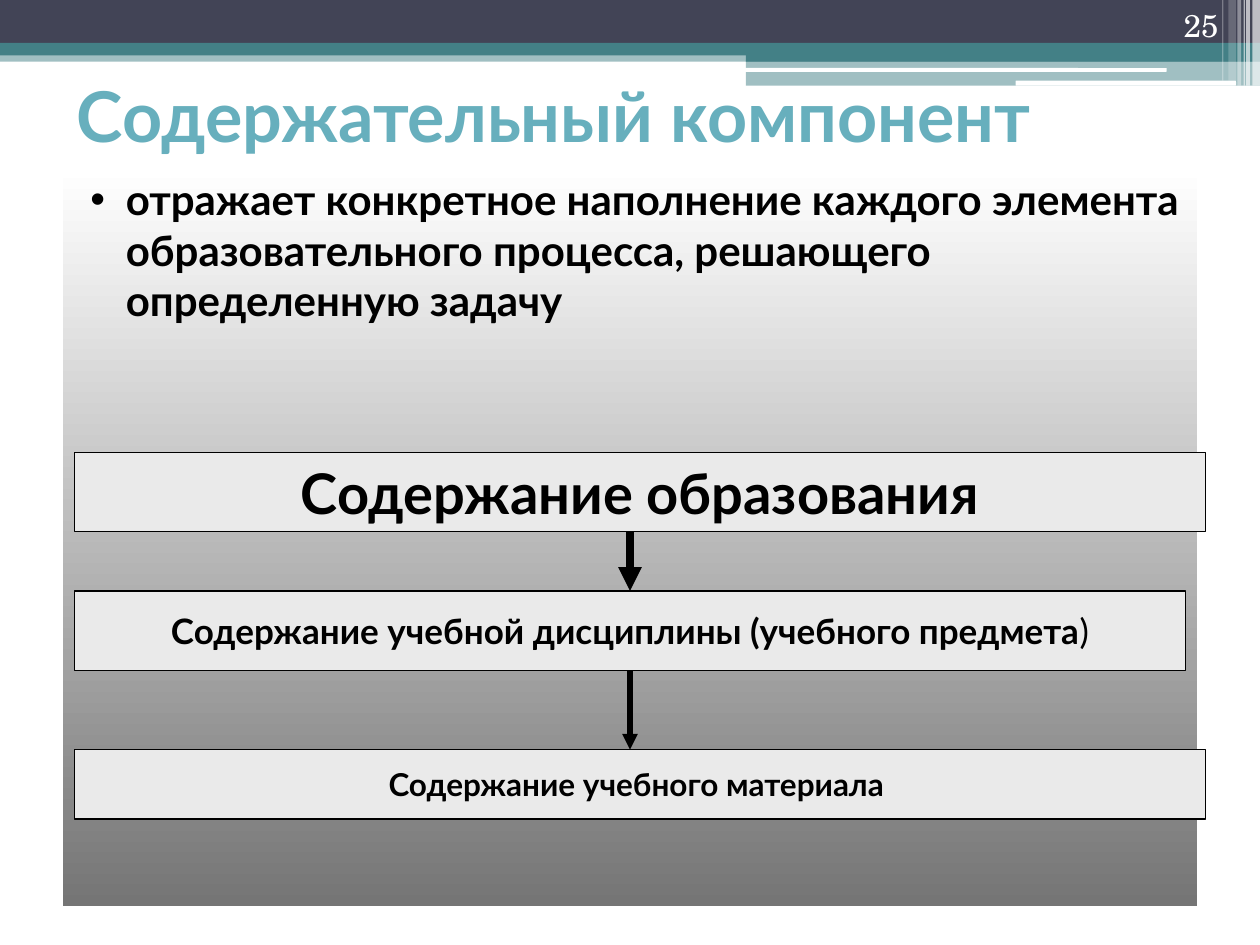
from pptx import Presentation
from pptx.dml.color import RGBColor
from pptx.enum.shapes import MSO_CONNECTOR, MSO_SHAPE
from pptx.enum.text import MSO_ANCHOR, MSO_AUTO_SIZE, PP_ALIGN
from pptx.oxml.ns import qn
from pptx.util import Inches, Pt
from lxml.etree import SubElement

WHITE = RGBColor(0xFF, 0xFF, 0xFF)
BLACK = RGBColor(0, 0, 0)
NAVY = RGBColor(0x42, 0x44, 0x56)
TEAL = RGBColor(0x43, 0x80, 0x86)
TITLE_BLUE = RGBColor(0x67, 0xAF, 0xBD)
BOX_GRAY = RGBColor(0xEA, 0xEA, 0xEA)
PANEL_GRAY = RGBColor(0x75, 0x75, 0x75)


def write_text(shape, text, size, color=BLACK, font="Lato", bold=True,
               align=PP_ALIGN.LEFT, anchor=MSO_ANCHOR.MIDDLE, wrap=True, plain_end=""):
    frame = shape.text_frame
    frame.auto_size = MSO_AUTO_SIZE.NONE
    frame.word_wrap = wrap
    frame.vertical_anchor = anchor
    paragraph = frame.paragraphs[0]
    paragraph.alignment = align
    for part, is_bold in ((text, bold), (plain_end, False)):
        if part:
            run = paragraph.add_run()
            run.text = part
            run.font.size = Pt(size)
            run.font.name = font
            run.font.bold = is_bold
            run.font.color.rgb = color
    return paragraph


class SlideBuilder:
    def __init__(self, presentation):
        self.slide = presentation.slides.add_slide(presentation.slide_layouts[5])

    def title(self, text, left, top, width, height):
        title = self.slide.shapes.title
        title.left, title.top = Inches(left), Inches(top)
        title.width, title.height = Inches(width), Inches(height)
        write_text(title, text, 40, TITLE_BLUE)

    def rectangle(self, left, top, width, height, color, opacity=100, kind=MSO_SHAPE.RECTANGLE):
        shape = self.slide.shapes.add_shape(
            kind, Inches(left), Inches(top), Inches(width), Inches(height))
        shape.shadow.inherit = False
        shape.line.fill.background()
        shape.fill.solid()
        shape.fill.fore_color.rgb = color
        if opacity < 100:
            fill_color = shape._element.spPr.find(qn("a:solidFill"))[0]
            SubElement(fill_color, qn("a:alpha")).set("val", str(opacity * 1000))
        return shape

    def page_number(self, text, left, top, width, height):
        box = self.slide.shapes.add_textbox(
            Inches(left), Inches(top), Inches(width), Inches(height))
        write_text(box, text, 18, WHITE, font="TeX Gyre Schola", bold=False,
                   align=PP_ALIGN.RIGHT, anchor=MSO_ANCHOR.BOTTOM)

    def bullet_panel(self, text, left, top, width, height):
        panel = self.rectangle(left, top, width, height, WHITE)
        panel.fill.gradient()
        panel.fill.gradient_angle = 270
        for stop, color, position in zip(panel.fill.gradient_stops, (WHITE, PANEL_GRAY), (0, 1)):
            stop.color.rgb = color
            stop.position = position
        paragraph = write_text(panel, text, 24, anchor=MSO_ANCHOR.TOP)
        paragraph.space_before = Pt(3)
        properties = paragraph._p.get_or_add_pPr()
        properties.set("marL", str(Inches(0.4)))
        properties.set("indent", str(Inches(-0.28)))
        SubElement(properties, qn("a:buFont")).set("typeface", "Arial")
        SubElement(properties, qn("a:buChar")).set("char", "•")

    def content_box(self, text, top, width, height, size, plain_end=""):
        box = self.rectangle(0.59, top, width, height, BOX_GRAY)
        box.line.color.rgb = BLACK
        box.line.width = Pt(0.75)
        write_text(box, text, size, align=PP_ALIGN.CENTER, wrap=False, plain_end=plain_end)
        return box

    def arrow(self, top, bottom, width, begin=None, end=None):
        connector = self.slide.shapes.add_connector(
            MSO_CONNECTOR.STRAIGHT, Inches(5), Inches(top), Inches(5), Inches(bottom))
        if begin is not None:
            connector.begin_connect(begin, 2)
        if end is not None:
            connector.end_connect(end, 0)
        connector.line.color.rgb = BLACK
        connector.line.width = Pt(width)
        SubElement(connector.line._get_or_add_ln(), qn("a:tailEnd")).set("type", "triangle")
        SubElement(connector._element.spPr, qn("a:effectLst"))


def main():
    presentation = Presentation()
    presentation.slide_width = Inches(10)
    presentation.slide_height = Inches(7.5)
    builder = SlideBuilder(presentation)

    for left, top, width, height, color, opacity in (
        (0, 0.4, 10, 0.09, TEAL, 50),
        (0, 0, 10, 0.34, NAVY, 100),
        (0, 0.34, 10, 0.1, TEAL, 100),
        (5.92, 0.39, 4.08, 0.1, TEAL, 100),
        (5.92, 0.48, 4.08, 0.2, TEAL, 50),
    ):
        builder.rectangle(left, top, width, height, color, opacity)
    for left, top, width, height in ((5.91, 0.54, 3.35, 0.03), (8.06, 0.64, 1.75, 0.04)):
        builder.rectangle(left, top, width, height, WHITE, kind=MSO_SHAPE.ROUNDED_RECTANGLE)
    for left, width, height, opacity in (
        (9.94, 0.06, 0.68, 65),
        (9.89, 0.03, 0.68, 65),
        (9.87, 0.01, 0.68, 60),
        (9.82, 0.03, 0.68, 40),
        (9.75, 0.06, 0.64, 20),
        (9.7, 0.01, 0.64, 30),
    ):
        builder.rectangle(left, 0, width, height, WHITE, opacity)

    builder.page_number("25", 8.94, 0, 0.83, 0.4)
    builder.title("Содержательный компонент", 0.51, 0.28, 9, 1.25)
    builder.bullet_panel(
        "отражает конкретное наполнение каждого элемента образовательного процесса, "
        "решающего определенную задачу", 0.5, 1.33, 9, 5.86)

    builder.content_box("Содержание образования", 3.59, 8.98, 0.63, 32)
    discipline = builder.content_box(
        "Содержание учебной дисциплины (учебного предмета", 4.69, 8.82, 0.63, 20, plain_end=")")
    builder.content_box("Содержание учебного материала ", 5.95, 8.98, 0.55, 18)
    builder.arrow(4.22, 4.69, 4.5, end=discipline)
    builder.arrow(5.32, 5.95, 3, begin=discipline)

    presentation.save("out.pptx")


if __name__ == "__main__":
    main()
